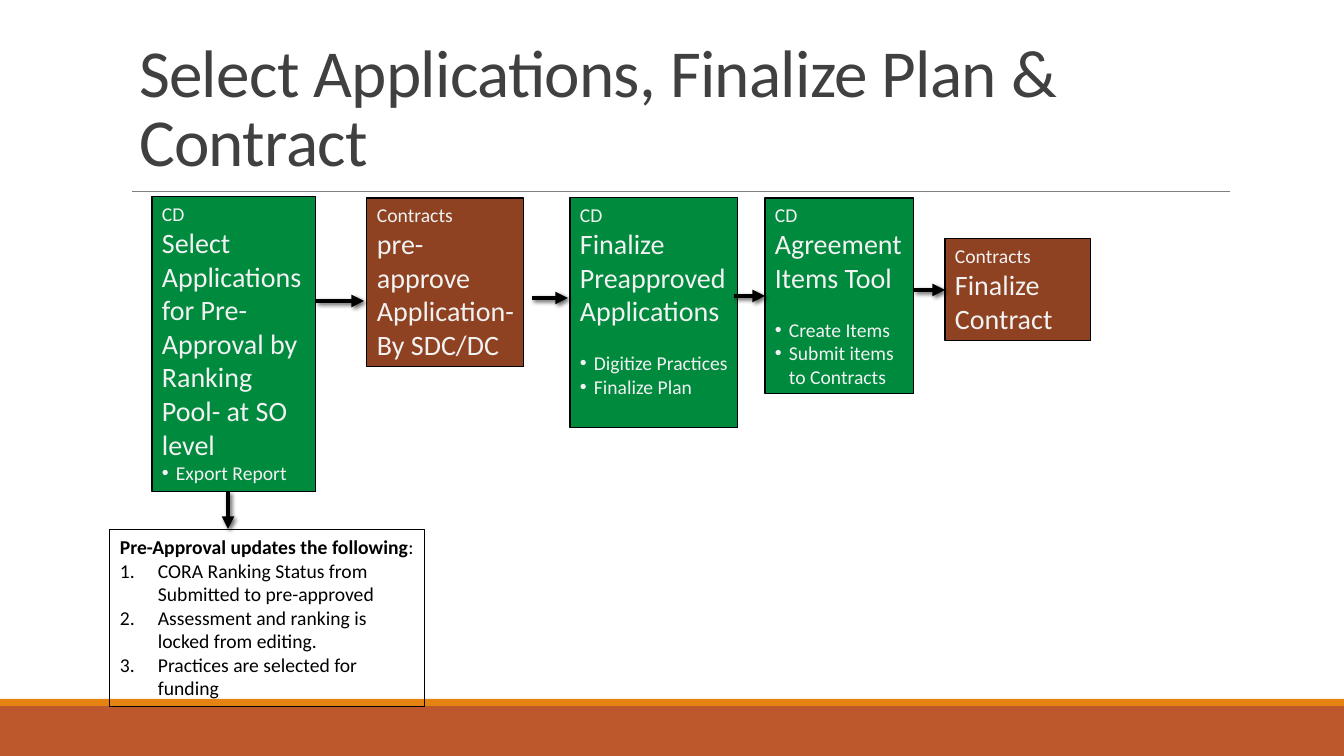
"""Build the slide on selecting applications and finalizing the plan and contract."""
import dataclasses
import typing

import lxml.etree
import pptx
import pptx.dml.color
import pptx.enum.shapes
import pptx.enum.text
import pptx.oxml
import pptx.oxml.ns
import pptx.util

SCALE = 914400 / 100.8
HUES = {
    "rust": "BD582C", "amber": "E48312", "rule": "808080", "title": "404040",
    "green": "008A3E", "brown": "8E4221", "pale": "F2F2F2", "black": "000000",
}
INDENT = {"dot": 14, "num": 38}
SHADOW = (
    '<a:effectLst xmlns:a="http://schemas.openxmlformats.org/drawingml/2006/main">'
    '<a:outerShdw blurRad="38100" dist="25400" dir="2700000" algn="tl" rotWithShape="0">'
    '<a:srgbClr val="000000"><a:alpha val="60000"/></a:srgbClr></a:outerShdw></a:effectLst>'
)


@dataclasses.dataclass(frozen=True)
class Step:
    key: str
    rect: tuple[int, int, int, int]
    fill: str
    tool: str
    task: str
    notes: tuple[str, ...] = ()
    gap: int = 0


@dataclasses.dataclass(frozen=True)
class Arrow:
    start: tuple[int, int]
    end: tuple[int, int]
    into: str = ""


STEPS = (
    Step("final", (570, 198, 168, 230), "green", "CD", "Finalize Preapproved Applications",
         ("Digitize Practices", "Finalize Plan"), 17),
    Step("sign", (945, 239, 146, 102), "brown", "Contracts", "Finalize Contract"),
    Step("items", (765, 198, 149, 196), "green", "CD", "Agreement Items Tool",
         ("Create Items", "Submit items to Contracts"), 17),
    Step("select", (152, 197, 164, 295), "green", "CD",
         "Select Applications for Pre-Approval by Ranking Pool- at SO level", ("Export Report",)),
    Step("prior", (367, 198, 157, 169), "brown", "Contracts",
         "pre-approve Application- By SDC/DC"),
)
ARROWS = (
    Arrow((228, 492), (228, 529)),
    Arrow((914, 290), (945, 290), "sign"),
    Arrow((734, 296), (765, 296), "items"),
    Arrow((532, 298), (568, 298)),
    Arrow((316, 301), (364, 301)),
)
UPDATES = (
    "CORA Ranking Status from Submitted to pre-approved",
    "Assessment and ranking is locked from editing.",
    "Practices are selected for funding",
)


def px(size: float) -> int:
    """Turn px into EMU."""
    return round(size * SCALE)


def hue(name: str) -> pptx.dml.color.RGBColor:
    """Look up a named colour."""
    return pptx.dml.color.RGBColor.from_string(HUES[name])


def say(frame: typing.Any, text: str, *, size: int = 14, color: str = "pale", bold: bool = False,
        mark: str = "", gap: int = 0, lead: float = 1.0, track: int = 0,
        join: bool = False) -> None:
    """Add formatted text as a new paragraph, or join it to the last one."""
    para = frame.paragraphs[-1]
    if para.runs and not join:
        para = frame.add_paragraph()
    para.alignment = pptx.enum.text.PP_ALIGN.LEFT
    para.line_spacing = lead
    para.space_before = pptx.util.Pt(gap)
    if mark:
        props = para._p.get_or_add_pPr()
        props.set("marL", str(px(INDENT[mark])))
        props.set("indent", str(-px(INDENT[mark])))
        if mark == "num":
            tag, key, value = "a:buAutoNum", "type", "arabicPeriod"
        else:
            font = lxml.etree.SubElement(props, pptx.oxml.ns.qn("a:buFont"))
            font.set("typeface", "Arial")
            tag, key, value = "a:buChar", "char", "•"
        lxml.etree.SubElement(props, pptx.oxml.ns.qn(tag)).set(key, value)
    run = para.add_run()
    run.text = text
    run.font.name = "Calibri"
    run.font.size = pptx.util.Pt(size)
    run.font.bold = bold
    run.font.color.rgb = hue(color)
    if track:
        run._r.get_or_add_rPr().set("spc", str(track))


def box(slide: typing.Any, rect: tuple[int, int, int, int], fill: str = "",
        edge: str = "") -> typing.Any:
    """Draw a rectangle with optional fill and edge."""
    shape = slide.shapes.add_shape(
        pptx.enum.shapes.MSO_SHAPE.RECTANGLE, *(px(side) for side in rect))
    shape.shadow.inherit = False
    if fill:
        shape.fill.solid()
        shape.fill.fore_color.rgb = hue(fill)
    else:
        shape.fill.background()
    if edge:
        shape.line.color.rgb = hue(edge)
        shape.line.width = pptx.util.Pt(0.75)
    else:
        shape.line.fill.background()
    shape.text_frame.word_wrap = True
    shape.text_frame.vertical_anchor = pptx.enum.text.MSO_ANCHOR.TOP
    return shape


def link(slide: typing.Any, start: tuple[int, int], end: tuple[int, int], color: str,
         width: float) -> typing.Any:
    """Draw a straight line without effects."""
    line = slide.shapes.add_connector(
        pptx.enum.shapes.MSO_CONNECTOR.STRAIGHT, *(px(side) for side in start + end))
    line.line.color.rgb = hue(color)
    line.line.width = pptx.util.Pt(width)
    lxml.etree.SubElement(line._element.spPr, pptx.oxml.ns.qn("a:effectLst"))
    return line


def point(slide: typing.Any, arrow: Arrow, boxes: dict[str, typing.Any]) -> None:
    """Draw a shadowed arrow and join it to its target box."""
    line = link(slide, arrow.start, arrow.end, "black", 3)
    props = line._element.spPr
    props.replace(props[-1], pptx.oxml.parse_xml(SHADOW))
    tip = lxml.etree.SubElement(line.line._get_or_add_ln(), pptx.oxml.ns.qn("a:tailEnd"))
    tip.set("type", "triangle")
    if arrow.into:
        line.end_connect(boxes[arrow.into], 1)


def card(slide: typing.Any, step: Step) -> typing.Any:
    """Draw one step of the process."""
    shape = box(slide, step.rect, step.fill, "black")
    frame = shape.text_frame
    say(frame, step.tool)
    say(frame, step.task, size=20)
    for index, note in enumerate(step.notes):
        say(frame, note, mark="dot", gap=0 if index else step.gap)
    return shape


def head(slide: typing.Any) -> None:
    """Place and format the title."""
    title = slide.shapes.title
    title.left, title.top, title.width, title.height = (px(n) for n in (129, 25, 1109, 160))
    frame = title.text_frame
    frame.auto_size = pptx.enum.text.MSO_AUTO_SIZE.NONE
    frame.word_wrap = True
    frame.vertical_anchor = pptx.enum.text.MSO_ANCHOR.BOTTOM
    say(frame, "Select Applications, Finalize Plan & Contract",
        size=48, color="title", lead=0.85, track=-50)


def main() -> None:
    """Build and save the slide."""
    deck = pptx.Presentation()
    deck.slide_width, deck.slide_height = px(1344), px(756)
    slide = deck.slides.add_slide(deck.slide_layouts[5])
    head(slide)
    box(slide, (0, 706, 1344, 50), "rust")
    box(slide, (0, 699, 1344, 7), "amber")
    link(slide, (132, 191), (1230, 191), "rule", 0.5)
    boxes = {step.key: card(slide, step) for step in STEPS}
    for arrow in ARROWS:
        point(slide, arrow, boxes)
    frame = box(slide, (110, 530, 315, 177), edge="black").text_frame
    say(frame, "Pre-Approval updates the following", color="black", bold=True)
    say(frame, ":", color="black", join=True)
    for update in UPDATES:
        say(frame, update, color="black", mark="num")
    deck.save("out.pptx")


if __name__ == "__main__":
    main()
